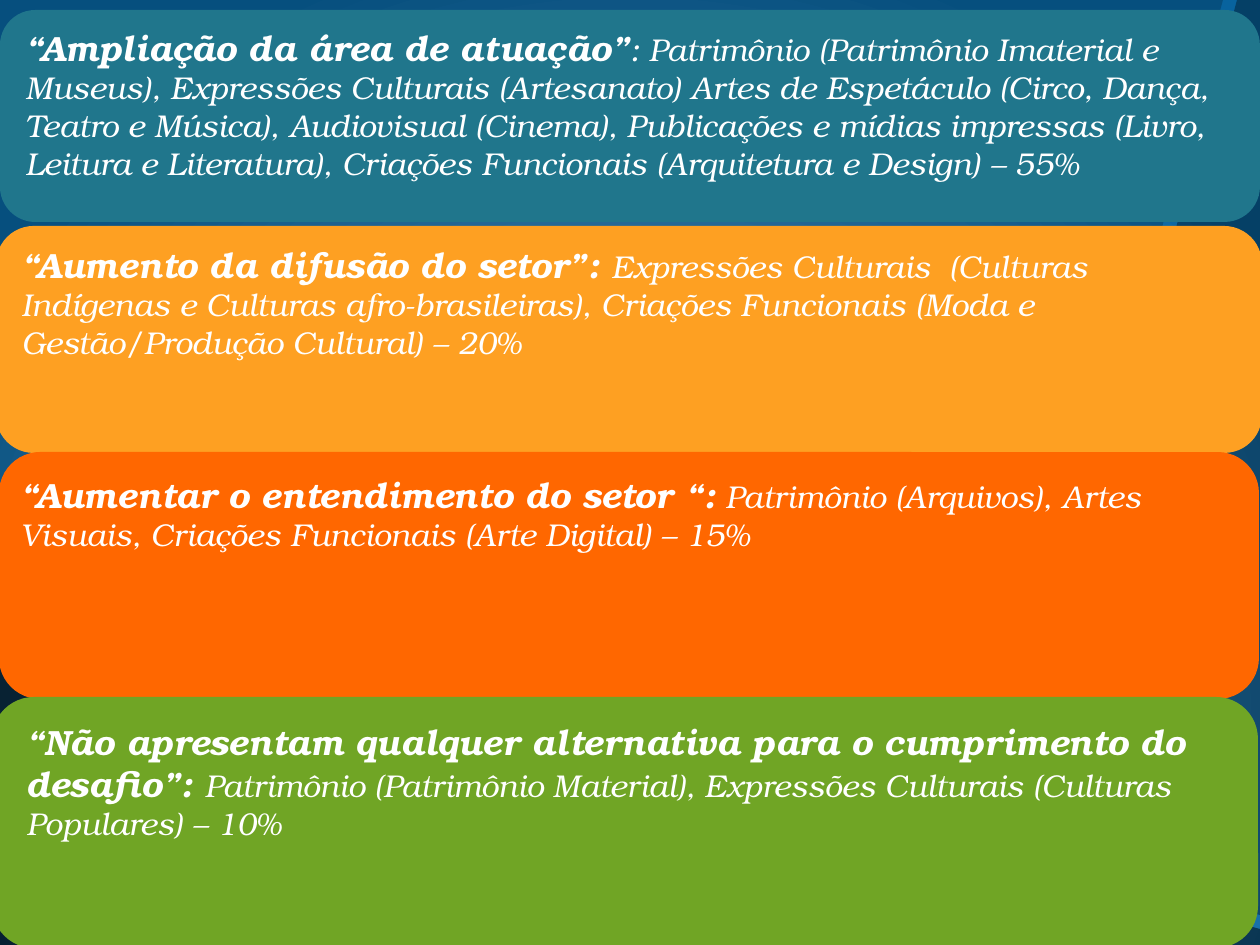
from lxml import etree
from pptx import Presentation
from pptx.dml.color import RGBColor
from pptx.enum.shapes import MSO_SHAPE as SHAPE
from pptx.enum.text import MSO_AUTO_SIZE as AUTO
from pptx.oxml.ns import qn
from pptx.util import Pt

PX = 914400 / 126  # EMU per pixel
FONT = "TeX Gyre Bonum"
WHITE = RGBColor(0xFF, 0xFF, 0xFF)
BLACK = RGBColor(0x00, 0x00, 0x00)
SKY = RGBColor(0x70, 0xB6, 0xE8)
BLUE = RGBColor(0x08, 0x63, 0x9E)
TEAL = RGBColor(0x20, 0x76, 0x8C)
AMBER = RGBColor(0xFE, 0xA0, 0x22)
ORANGE = RGBColor(0xFF, 0x67, 0x00)
GREEN = RGBColor(0x70, 0xA5, 0x25)

# Dark background panels: opacity in percent, corner points
PANELS = [
    (20, [(0, 0), (1223, 0), (1000, 833), (996, 840), (987, 842), (0, 577)]),
    (70, [(0, 590), (983, 854), (990, 859), (992, 868), (970, 945), (0, 945)]),
    (50, [(1013, 863), (1018, 863), (1260, 929), (1260, 945), (984, 945),
          (1004, 872), (1007, 866)]),
    (35, [(1237, 0), (1260, 0), (1260, 915), (1021, 851), (1014, 846), (1013, 837)]),
]

# Bands: colour, band box, text box, bold heading, detail
BANDS = [
    (AMBER, (-4, 226, 1266, 227), (9, 237, 1236, 131),
     "“Aumento da difusão do setor”: ",
     "Expressões Culturais  (Culturas Indígenas e Culturas afro-brasileiras), "
     "Criações Funcionais (Moda e Gestão/Produção Cultural) – 20%"),
    (ORANGE, (-1, 452, 1260, 247), (8, 467, 1237, 93),
     "“Aumentar o entendimento do setor “:",
     " Patrimônio (Arquivos), Artes Visuais, Criações Funcionais (Arte Digital) – 15%"),
    (GREEN, (-8, 697, 1266, 251), (14, 714, 1231, 93),
     "“Não apresentam qualquer alternativa para o cumprimento do desafio”: ",
     "Patrimônio (Patrimônio Material), Expressões Culturais (Culturas Populares) – 10%"),
    (TEAL, (0, 10, 1260, 212), (13, 20, 1232, 170),
     "“Ampliação da área de atuação”",
     ": Patrimônio (Patrimônio Imaterial e Museus), Expressões Culturais (Artesanato) "
     "Artes de Espetáculo (Circo, Dança, Teatro e Música), Audiovisual (Cinema), "
     "Publicações e mídias impressas (Livro, Leitura e Literatura), Criações Funcionais "
     "(Arquitetura e Design) – 55%"),
]


def px(n):
    return round(n * PX)


def set_background(s):
    fill = s.background.fill
    fill.gradient()
    for stop, position, color in zip(fill.gradient_stops, (0, 1), (SKY, BLUE)):
        stop.position = position
        stop.color.rgb = color
    # Radial instead of linear
    grad = next(s._element.iter(qn("a:gradFill")))
    grad.remove(grad.find(qn("a:lin")))
    radial = etree.SubElement(grad, qn("a:path"), path="circle")
    etree.SubElement(radial, qn("a:fillToRect"), l="50000", t="50000", r="50000", b="0")


def paint(sp, color):
    sp.shadow.inherit = False
    sp.fill.solid()
    sp.fill.fore_color.rgb = color
    sp.line.fill.background()


def add_panel(s, opacity, points):
    builder = s.shapes.build_freeform(*points[0], scale=PX)
    builder.add_line_segments(points[1:], close=True)
    sp = builder.convert_to_shape()
    paint(sp, BLACK)
    color = next(sp._element.spPr.iter(qn("a:srgbClr")))
    etree.SubElement(color, qn("a:alpha"), val=str(opacity * 1000))


def add_band(s, color, box):
    paint(s.shapes.add_shape(SHAPE.ROUNDED_RECTANGLE, *map(px, box)), color)


def add_label(s, box, heading, detail):
    tf = s.shapes.add_textbox(*map(px, box)).text_frame
    tf.word_wrap = True
    tf.auto_size = AUTO.SHAPE_TO_FIT_TEXT
    p = tf.paragraphs[0]
    p.font.name = FONT
    p.font.italic = True
    p.font.color.rgb = WHITE
    for text, size, bold in ((heading, 20, True), (detail, 18, False)):
        r = p.add_run()
        r.text = text
        r.font.size = Pt(size)
        r.font.bold = bold


def main():
    prs = Presentation()
    prs.slide_width, prs.slide_height = px(1260), px(945)
    s = prs.slides.add_slide(prs.slide_layouts[6])

    # Backdrop
    set_background(s)
    for opacity, points in PANELS:
        add_panel(s, opacity, points)

    # Coloured bands with their text
    for color, band_box, text_box, heading, detail in BANDS:
        add_band(s, color, band_box)
        add_label(s, text_box, heading, detail)

    prs.save("out.pptx")


if __name__ == "__main__":
    main()
